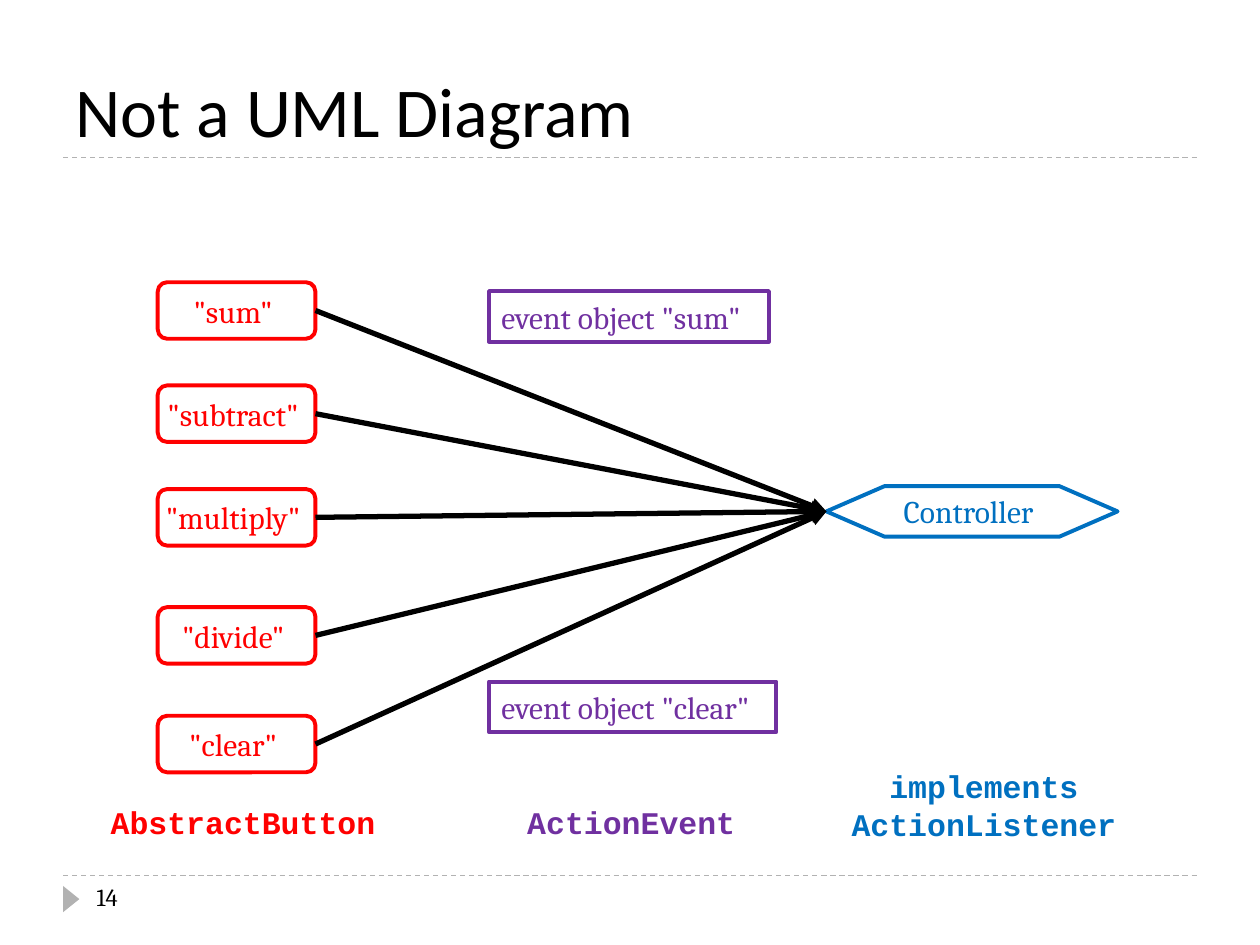
from lxml.etree import SubElement
from pptx import Presentation
from pptx.dml.color import RGBColor
from pptx.enum.dml import MSO_LINE
from pptx.enum.shapes import MSO_CONNECTOR, MSO_SHAPE
from pptx.enum.text import MSO_ANCHOR, PP_ALIGN
from pptx.oxml.ns import qn
from pptx.util import Cm, Pt

INK = {"black": "000000", "gray": "B2B2B2", "red": "FF0000",
       "blue": "0070C0", "purple": "7030A0"}
TITLE = "Not a UML Diagram"
PAGE = "14"
BUTTONS = [('"sum" ', 5.69), ('"subtract" ', 7.77), ('"multiply" ', 9.86),
           ('"divide" ', 12.24), ('"clear" ', 14.43)]
EVENTS = [('event object "sum"', 5.87, 5.64),
          ('event object "clear"', 13.74, 5.79)]
LABELS = [("AbstractButton ", "red", (1.93, 16, 6.32, 1.14)),
          ("ActionEvent", "purple", (10.31, 16, 4.83, 1.14)),
          ("implements\nActionListener", "blue", (16.81, 15.24, 6.05, 1.98))]
RULES = [3.18, 17.65]


def hue(name):
    return RGBColor.from_string(INK[name])


def write(shape, text, size=18, font="Cambria", color="black", bold=False,
          align=PP_ALIGN.CENTER, anchor=MSO_ANCHOR.MIDDLE, wrap=False):
    frame = shape.text_frame
    frame.text = text
    frame.word_wrap = wrap
    frame.vertical_anchor = anchor
    for para in frame.paragraphs:
        para.alignment = align
        face = para.font
        face.size, face.name, face.bold = Pt(size), font, bold
        face.color.rgb = hue(color)


def draw(slide, kind, box, color=None):
    shape = slide.shapes.add_shape(kind, *map(Cm, box))
    shape.shadow.inherit = False
    shape.fill.background()
    if color:
        shape.line.color.rgb = hue(color)
        shape.line.width = Pt(2.25)
    else:
        shape.line.fill.background()
    return shape


def join(slide, ends, color, width):
    line = slide.shapes.add_connector(MSO_CONNECTOR.STRAIGHT, *map(Cm, ends))
    line.line.color.rgb = hue(color)
    line.line.width = Pt(width)
    SubElement(line._element.spPr, qn("a:effectLst"))
    return line


def main():
    deck = Presentation()
    deck.slide_width, deck.slide_height = Cm(25.4), Cm(19.05)
    slide = deck.slides.add_slide(deck.slide_layouts[5])

    for y in RULES:
        rule = join(slide, (1.27, y, 24.13, y), "gray", 0.75)
        rule.line.dash_style = MSO_LINE.DASH
    mark = draw(slide, MSO_SHAPE.ISOSCELES_TRIANGLE, (1.17, 17.96, 0.53, 0.33))
    mark.rotation = 90
    mark.fill.solid()
    mark.fill.fore_color.rgb = hue("gray")

    title = slide.shapes.title
    title.left, title.top = Cm(1.27), Cm(0.64)
    title.width, title.height = Cm(22.86), Cm(2.54)
    write(title, TITLE, size=40, font="Calibri", align=PP_ALIGN.LEFT,
          anchor=MSO_ANCHOR.BOTTOM, wrap=True)
    page = slide.shapes.add_textbox(Cm(1.7), Cm(17.65), Cm(5.51), Cm(1.02))
    write(page, PAGE, size=14, align=PP_ALIGN.LEFT, anchor=MSO_ANCHOR.TOP,
          wrap=True)

    hub = draw(slide, MSO_SHAPE.FLOWCHART_PREPARATION,
               (16.66, 9.8, 5.87, 1.02), "blue")
    write(hub, "Controller ", color="blue")

    for text, top in BUTTONS:
        button = draw(slide, MSO_SHAPE.ROUNDED_RECTANGLE,
                      (3.18, top, 3.18, 1.14), "red")
        write(button, text, color="red")
        arrow = join(slide, (0, 0, 1, 1), "black", 3)
        arrow.begin_connect(button, 3)
        arrow.end_connect(hub, 1)
        SubElement(arrow.line._get_or_add_ln(), qn("a:tailEnd"),
                   type="triangle")

    for text, top, width in EVENTS:
        event = draw(slide, MSO_SHAPE.FLOWCHART_PROCESS,
                     (9.86, top, width, 1.02), "purple")
        write(event, text, color="purple", align=PP_ALIGN.LEFT)

    for text, color, box in LABELS:
        label = draw(slide, MSO_SHAPE.ROUNDED_RECTANGLE, box)
        write(label, text, font="Courier New", color=color, bold=True)

    deck.save("out.pptx")


if __name__ == "__main__":
    main()
